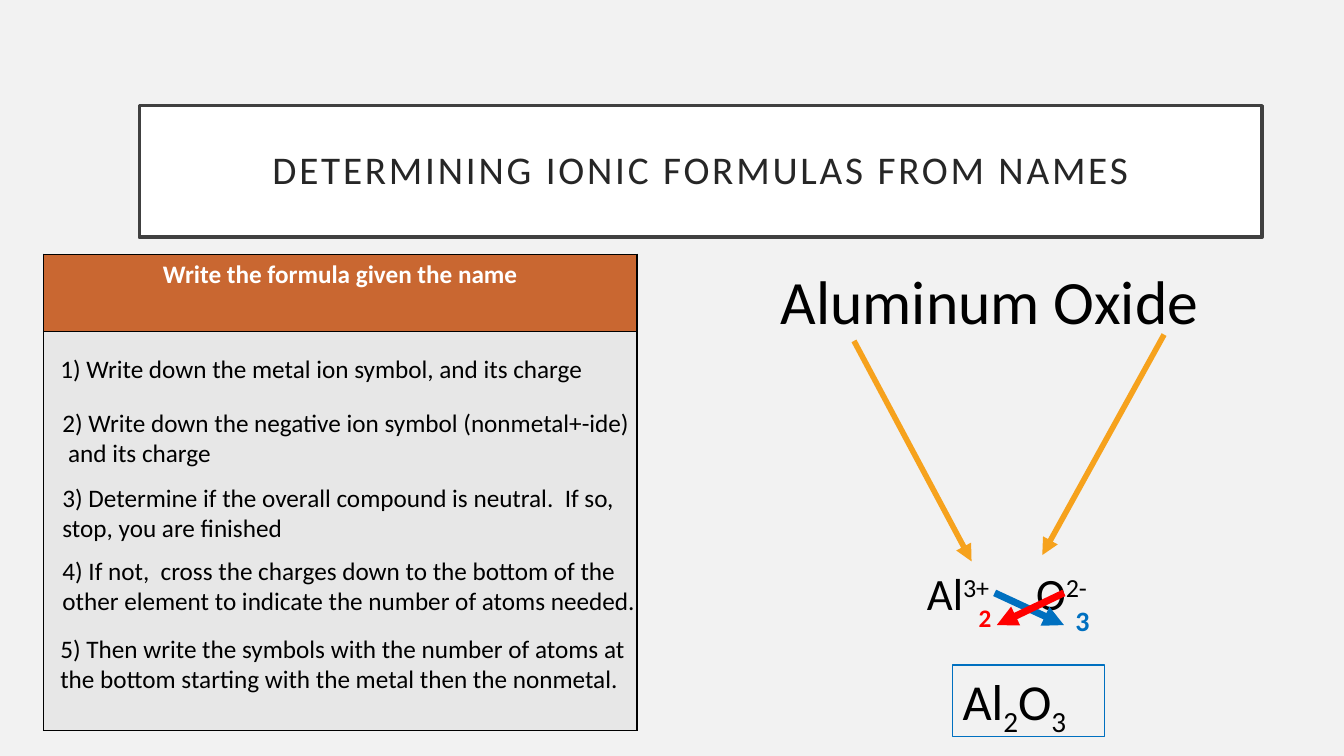
from lxml.etree import SubElement
from pptx import Presentation
from pptx.dml.color import RGBColor
from pptx.enum.shapes import MSO_CONNECTOR, MSO_SHAPE
from pptx.enum.text import MSO_ANCHOR, PP_ALIGN
from pptx.oxml.ns import qn
from pptx.util import Pt

BLACK, WHITE, BLUE, RED, AMBER = "000000", "FFFFFF", "0070C0", "FF0000", "F6A21D"
SUPER, SUB = 30000, -25000

STEPS = [  # left, top, width, height, paragraphs
    (36, 248.5, 392, 51, ["1) Write down the metal ion symbol, and its charge"]),
    (37.5, 287.5, 430, 73, ["2) Write down the negative ion symbol (nonmetal+-ide)",
                            " and its charge"]),
    (37.5, 341, 411, 51, ["3) Determine if the overall compound is neutral.  If so, "
                          "stop, you are finished"]),
    (37.5, 393, 452, 73, ["4) If not,  cross the charges down to the bottom of the "
                          "other element to indicate the number of atoms needed."]),
    (36, 448.5, 419, 94, ["5) Then write the symbols with the number of atoms at the "
                          "bottom starting with the metal then the nonmetal."]),
]


def rgb(color):
    return RGBColor.from_string(color)


def set_attrs(obj, values):
    for name, value in values.items():
        setattr(obj, name, value)


def add_run(p, text, size, color=BLACK, bold=False, **attrs):
    """Add a run; attrs are raw run properties such as baseline or spc."""
    r = p.add_run()
    r.text = text
    set_attrs(r.font, {"name": "Calibri", "size": Pt(size), "bold": bold})
    r.font.color.rgb = rgb(color)
    for name, value in attrs.items():
        r.font._element.set(name, str(value))


def add_text(s, box, lines, size, color=BLACK, bold=False, align=PP_ALIGN.LEFT):
    tf = s.shapes.add_textbox(*map(Pt, box)).text_frame
    tf.word_wrap = True
    for i, line in enumerate(lines):
        p = tf.paragraphs[0] if i == 0 else tf.add_paragraph()
        p.alignment = align
        add_run(p, line, size, color, bold)


def add_formula(sp, size, parts):
    """Write (text, baseline) parts in one line."""
    tf = sp.text_frame
    set_attrs(tf, {"word_wrap": True, "vertical_anchor": MSO_ANCHOR.TOP})
    p = tf.paragraphs[0]
    p.alignment = PP_ALIGN.LEFT
    for text, baseline in parts:
        add_run(p, text, size, baseline=baseline)


def add_arrow(s, start, end, color, width):
    c = s.shapes.add_connector(MSO_CONNECTOR.STRAIGHT, *map(Pt, start + end))
    c.line.color.rgb = rgb(color)
    c.line.width = Pt(width)
    spPr = c._element.spPr
    SubElement(spPr.find(qn("a:ln")), qn("a:tailEnd"), type="triangle")
    SubElement(spPr, qn("a:effectLst"))


def set_title(s, text):
    sp = s.shapes.title
    set_attrs(sp, {"left": Pt(99.5), "top": Pt(75.5), "width": Pt(802), "height": Pt(94)})
    sp.fill.solid()
    sp.fill.fore_color.rgb = rgb(WHITE)
    sp.line.color.rgb = rgb("404040")
    sp.line.width = Pt(2.5)
    tf = sp.text_frame
    set_attrs(tf, {"word_wrap": True, "vertical_anchor": MSO_ANCHOR.MIDDLE})
    set_attrs(tf, {f"margin_{side}": Pt(14.4) for side in ("left", "top", "right", "bottom")})
    p = tf.paragraphs[0]
    set_attrs(p, {"alignment": PP_ALIGN.CENTER, "line_spacing": 0.9})
    add_run(p, text, 28, "262626", spc=200)


def style_cell(cell, color):
    tcPr = cell._tc.get_or_add_tcPr()
    for side in ("lnL", "lnR", "lnT", "lnB"):
        ln = SubElement(tcPr, qn(f"a:{side}"), w=str(Pt(1)))
        SubElement(SubElement(ln, qn("a:solidFill")), qn("a:srgbClr"), val=BLACK)
    cell.fill.solid()
    cell.fill.fore_color.rgb = rgb(color)


def add_steps_table(s, heading):
    table = s.shapes.add_table(2, 1, Pt(31), Pt(181.5), Pt(424), Pt(340.5)).table
    for row, height, color in zip(table.rows, (55.5, 285), ("C96731", "E7E7E7")):
        row.height = Pt(height)
        style_cell(row.cells[0], color)
    p = table.cell(0, 0).text_frame.paragraphs[0]
    p.alignment = PP_ALIGN.CENTER
    add_run(p, heading, 18, WHITE, bold=True)


def main():
    prs = Presentation()
    set_attrs(prs, {"slide_width": Pt(960), "slide_height": Pt(540)})
    s = prs.slides.add_slide(prs.slide_layouts[5])
    s.background.fill.solid()
    s.background.fill.fore_color.rgb = rgb("F2F2F2")

    set_title(s, "DETERMINING IONIC FORMULAS FROM NAMES")
    add_steps_table(s, "Write the formula given the name")

    add_text(s, (513.5, 184.5, 387, 60.5), ["Aluminum Oxide"], 44, align=PP_ALIGN.CENTER)
    add_arrow(s, (831.5, 239), (744.5, 396.5), AMBER, 4)
    add_arrow(s, (610, 243.5), (694, 401), AMBER, 4)

    for left, width, symbol, charge in ((655, 122, "Al", "3+"), (733, 70, "O", "2-")):
        ion = s.shapes.add_textbox(Pt(left), Pt(400.5), Pt(width), Pt(46))
        add_formula(ion, 32, [(symbol, 0), (charge, SUPER)])
    add_arrow(s, (710.5, 423.5), (760, 446.5), BLUE, 5)
    add_arrow(s, (760, 423.5), (712, 446.5), RED, 5)
    add_text(s, (761, 427.5, 28, 31.5), ["3"], 20, BLUE, bold=True)
    add_text(s, (692, 427, 20, 29.5), ["2"], 18, RED, bold=True)

    answer = s.shapes.add_shape(MSO_SHAPE.RECTANGLE, Pt(680.5), Pt(475), Pt(108.5), Pt(51))
    answer.shadow.inherit = False
    answer.fill.background()
    answer.line.color.rgb = rgb(BLUE)
    answer.line.width = Pt(0.75)
    add_formula(answer, 36, [("Al", 0), ("2", SUB), ("O", 0), ("3", SUB)])

    for *box, lines in STEPS:
        add_text(s, box, lines, 18)
    prs.save("out.pptx")


if __name__ == "__main__":
    main()
